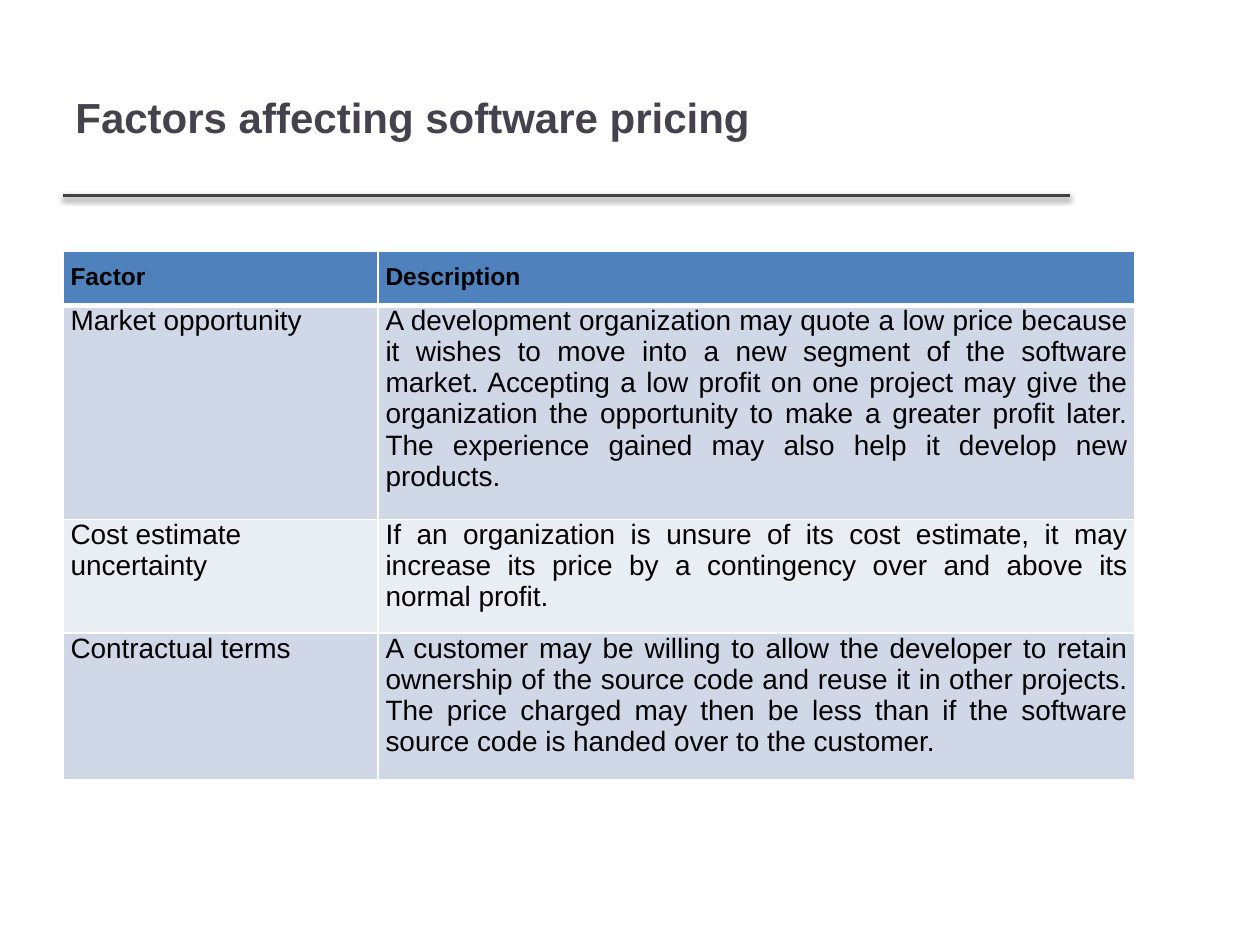
from lxml import etree
from pptx import Presentation
from pptx import util as u
from pptx.dml.color import RGBColor
from pptx.enum import shapes, text
from pptx.oxml import parse_xml
from pptx.oxml.ns import nsdecls, qn

FONT = "Arial"
LEFT = 0.5
HEADER = ("Factor", "Description")
FACTORS = [
    ("Market opportunity",
     "A development organization may quote a low price because it wishes to move into a new "
     "segment of the software market. Accepting a low profit on one project may give the "
     "organization the opportunity to make a greater profit later. The experience gained may "
     "also help it develop new products."),
    ("Cost estimate uncertainty",
     "If an organization is unsure of its cost estimate, it may increase its price by a "
     "contingency over and above its normal profit."),
    ("Contractual terms",
     "A customer may be willing to allow the developer to retain ownership of the source code "
     "and reuse it in other projects. The price charged may then be less than if the software "
     "source code is handed over to the customer."),
]


def color(hex_value):
    return RGBColor.from_string(hex_value)


def write(frame, words, size, hex_value, bold=False, align=text.PP_ALIGN.LEFT):
    paragraph = frame.paragraphs[0]
    paragraph.alignment = align
    run = paragraph.add_run()
    run.text = words
    run.font.name = FONT
    run.font.size = u.Pt(size)
    run.font.bold = bold
    run.font.color.rgb = color(hex_value)


def add_title(slide, left, top, width, height):
    # Heading, centred vertically above the rule
    heading = slide.shapes.add_textbox(*map(u.Inches, (left, top, width, height)))
    frame = heading.text_frame
    frame.word_wrap = True
    frame.vertical_anchor = text.MSO_ANCHOR.MIDDLE
    write(frame, "Factors affecting software pricing", 24, "46424D", bold=True)

    # Rule along the bottom edge, with a soft shadow
    bottom = top + height
    rule = slide.shapes.add_connector(
        shapes.MSO_CONNECTOR.STRAIGHT,
        *map(u.Inches, (left, bottom, left + width, bottom)))
    rule.line.color.rgb = color("404040")
    rule.line.width = u.Pt(2)
    rule._element.spPr.append(parse_xml(
        f'<a:effectLst {nsdecls("a")}>'
        f'<a:outerShdw blurRad="{u.Pt(3.1)}" dist="{u.Pt(1.6)}" dir="5400000" rotWithShape="0">'
        '<a:srgbClr val="000000"><a:alpha val="38000"/></a:srgbClr>'
        '</a:outerShdw></a:effectLst>'))


def set_borders(cell, bottom_width):
    properties = cell._tc.get_or_add_tcPr()
    for side, width in (("L", 1), ("R", 1), ("T", 1), ("B", bottom_width)):
        border = etree.SubElement(properties, qn(f"a:ln{side}"), w=str(u.Pt(width)))
        fill = etree.SubElement(border, qn("a:solidFill"))
        etree.SubElement(fill, qn("a:srgbClr"), val="FFFFFF")


def style_cell(cell, fill, top_margin, bottom_width=1):
    cell.margin_left = cell.margin_right = u.Inches(0.06)
    cell.margin_top = u.Inches(top_margin)
    cell.margin_bottom = u.Inches(0.1)
    set_borders(cell, bottom_width)
    cell.fill.solid()
    cell.fill.fore_color.rgb = color(fill)


def add_factor_table(slide, left, top, column_widths, row_height):
    row_count = len(FACTORS) + 1
    table = slide.shapes.add_table(
        row_count, len(HEADER),
        *map(u.Inches, (left, top, sum(column_widths), row_height * row_count))).table
    for column, width in zip(table.columns, column_widths):
        column.width = u.Inches(width)

    # Header row
    justify = text.PP_ALIGN.JUSTIFY
    for cell, label in zip(table.rows[0].cells, HEADER):
        style_cell(cell, "4F81BD", top_margin=0.1, bottom_width=3)
        write(cell.text_frame, label, 14, "000000", bold=True, align=justify)

    # Banded factor rows
    for index, factor in enumerate(FACTORS):
        band = ("D0D8E8", "E9EDF4")[index % 2]
        alignments = (text.PP_ALIGN.LEFT, justify)
        for cell, words, align in zip(table.rows[index + 1].cells, factor, alignments):
            style_cell(cell, band, top_margin=0, bottom_width=1)
            write(cell.text_frame, words, 16, "000000", align=align)


def main():
    deck = Presentation()
    deck.slide_width, deck.slide_height = u.Inches(10), u.Inches(7.5)
    slide = deck.slides.add_slide(deck.slide_layouts[6])
    add_title(slide, LEFT, 0.3, 7.99, 1.25)
    add_factor_table(slide, LEFT, 1.99, (2.5, 6.01), 0.41)
    deck.save("out.pptx")


if __name__ == "__main__":
    main()
